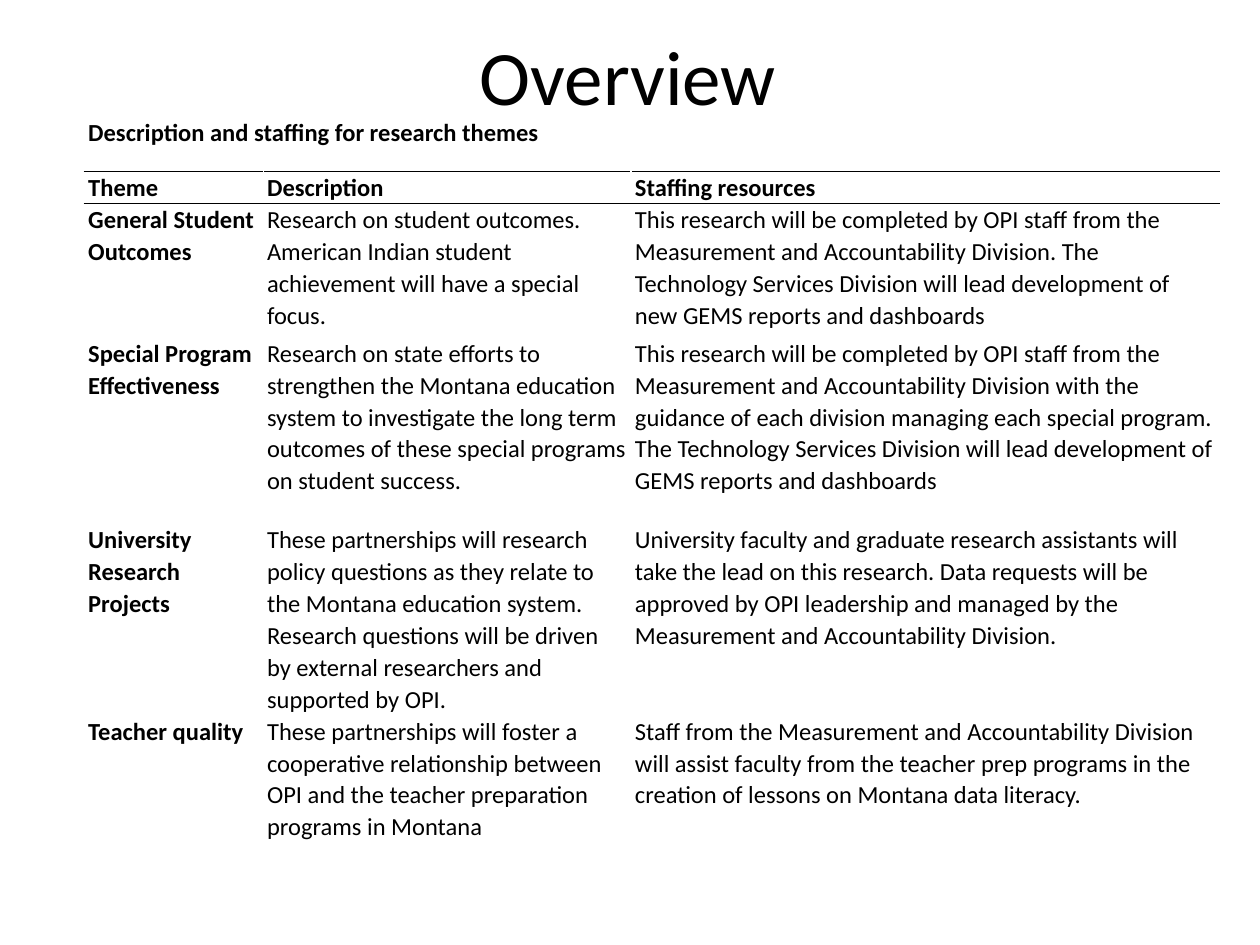
from dataclasses import dataclass

from lxml.etree import SubElement
from pptx import Presentation
from pptx.dml.color import RGBColor
from pptx.enum.text import MSO_ANCHOR, PP_ALIGN
from pptx.oxml.ns import qn
from pptx.util import Inches, Pt

BLACK, WHITE = "000000", "FFFFFF"
COLUMN_WIDTHS = (1.42, 2.92, 4.67)
ROW_HEIGHTS = (0.44, 0.14, 1.06, 1.48, 1.06, 1.06)
CAPTION = "Description and staffing for research themes"
HEADINGS = ("Theme", "Description", "Staffing resources")
CELL_FORMAT = {
    "margin_left": Inches(0.03),
    "margin_right": Inches(0.03),
    "margin_top": 0,
    "margin_bottom": 0,
    "vertical_anchor": MSO_ANCHOR.TOP,
}


@dataclass
class Theme:
    """One research theme with its description and staffing."""

    name: str
    description: str
    staffing: str


THEMES = [
    Theme(
        "General Student Outcomes",
        "Research on student outcomes. American Indian student achievement "
        "will have a special focus.",
        "This research will be completed by OPI staff from the Measurement and "
        "Accountability Division. The Technology Services Division will lead "
        "development of new GEMS reports and dashboards",
    ),
    Theme(
        "Special Program Effectiveness",
        "Research on state efforts to strengthen the Montana education system "
        "to investigate the long term outcomes of these special programs on "
        "student success.",
        "This research will be completed by OPI staff from the Measurement and "
        "Accountability Division with the guidance of each division managing "
        "each special program. The Technology Services Division will lead "
        "development of GEMS reports and dashboards",
    ),
    Theme(
        "University Research Projects",
        "These partnerships will research policy questions as they relate to "
        "the Montana education system. Research questions will be driven by "
        "external researchers and supported by OPI.",
        "University faculty and graduate research assistants will take the "
        "lead on this research. Data requests will be approved by OPI "
        "leadership and managed by the Measurement and Accountability Division.",
    ),
    Theme(
        "Teacher quality",
        "These partnerships will foster a cooperative relationship between OPI "
        "and the teacher preparation programs in Montana",
        "Staff from the Measurement and Accountability Division will assist "
        "faculty from the teacher prep programs in the creation of lessons on "
        "Montana data literacy.",
    ),
]


def color(hex_code: str) -> RGBColor:
    """Turn a hex string into a colour."""
    return RGBColor.from_string(hex_code)


def apply(target, values: dict) -> None:
    """Set each named attribute on the target."""
    for name, value in values.items():
        setattr(target, name, value)


def format_font(font, size: float, bold: bool) -> None:
    """Give a font the slide's typeface and colour."""
    apply(font, {"name": "Calibri", "size": Pt(size), "bold": bold})
    font.color.rgb = color(BLACK)


def set_borders(cell, top: str, bottom: str) -> None:
    """Draw one-point borders, white at the sides."""
    properties = cell._tc.get_or_add_tcPr()
    for side, hex_code in {"L": WHITE, "R": WHITE, "T": top, "B": bottom}.items():
        line = SubElement(properties, qn(f"a:ln{side}"), w=str(Pt(1)))
        SubElement(SubElement(line, qn("a:solidFill")), qn("a:srgbClr"), val=hex_code)


def fill_cell(cell, text: str, bold: bool, top: str, bottom: str) -> None:
    """Write and format one table cell."""
    apply(cell, CELL_FORMAT)
    set_borders(cell, top, bottom)
    cell.fill.background()
    cell.text = text
    paragraph = cell.text_frame.paragraphs[0]
    paragraph.line_spacing = 1.07
    format_font(paragraph.runs[0].font if text else paragraph.font, 14, bold)


def add_title(slide, text: str) -> None:
    """Place the slide title."""
    title = slide.shapes.title
    apply(title, {"left": Inches(1), "top": 0, "width": Inches(7.97), "height": Inches(1.19)})
    title.text_frame.text = text
    title.text_frame.vertical_anchor = MSO_ANCHOR.MIDDLE
    paragraph = title.text_frame.paragraphs[0]
    paragraph.alignment = PP_ALIGN.CENTER
    format_font(paragraph.runs[0].font, 44, False)


def add_theme_table(slide) -> None:
    """Build the table of themes under its caption."""
    rows = [(CAPTION, "", ""), HEADINGS]
    rows += [(theme.name, theme.description, theme.staffing) for theme in THEMES]
    table = slide.shapes.add_table(
        len(rows), len(HEADINGS), Inches(0.67), Inches(0.92),
        Inches(sum(COLUMN_WIDTHS)), Inches(sum(ROW_HEIGHTS)),
    ).table
    apply(table, {"first_row": False, "horz_banding": False})
    for column, width in zip(table.columns, COLUMN_WIDTHS):
        column.width = Inches(width)
    for row, height in zip(table.rows, ROW_HEIGHTS):
        row.height = Inches(height)
    for row_index, texts in enumerate(rows):
        top = BLACK if row_index in (1, 2) else WHITE
        bottom = BLACK if row_index in (0, 1) else WHITE
        for column_index, text in enumerate(texts):
            bold = row_index < 2 or column_index == 0
            fill_cell(table.cell(row_index, column_index), text, bold, top, bottom)
    table.cell(0, 0).merge(table.cell(0, len(HEADINGS) - 1))


def main() -> None:
    """Build and save the overview slide."""
    presentation = Presentation()
    apply(presentation, {"slide_width": Inches(10), "slide_height": Inches(7.5)})
    slide = presentation.slides.add_slide(presentation.slide_layouts[5])
    add_title(slide, "Overview")
    add_theme_table(slide)
    presentation.save("out.pptx")


if __name__ == "__main__":
    main()
